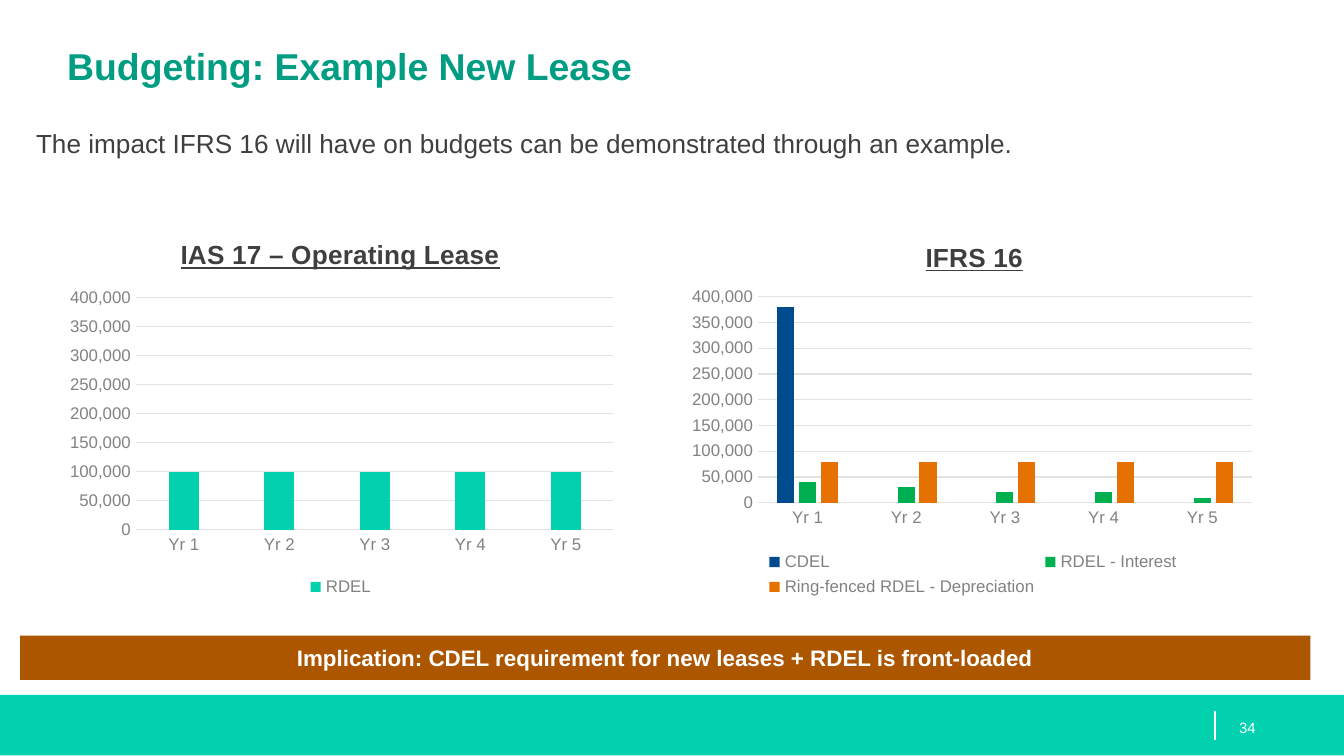
from lxml.etree import SubElement
from pptx import Presentation
from pptx.chart.data import CategoryChartData
from pptx.dml.color import RGBColor
from pptx.enum.chart import XL_CHART_TYPE, XL_LEGEND_POSITION, XL_TICK_MARK
from pptx.enum.shapes import MSO_CONNECTOR, MSO_SHAPE
from pptx.enum.text import MSO_ANCHOR, PP_ALIGN
from pptx.oxml.ns import qn
from pptx.util import Inches, Pt

FONT = "Arial"
TEAL, DARK_TEAL, BROWN, WHITE = "01D1AE", "019D82", "AC5600", "FFFFFF"
TEXT, AXIS_TEXT, GRID = "3F3F3F", "828282", "E2E2E2"
YEARS = [f"Yr {year}" for year in range(1, 6)]


def color(value):
    return RGBColor.from_string(value)


def style_font(font, size, value, bold=False):
    font.name = FONT
    font.size = Pt(size)
    font.bold = bold
    font.color.rgb = color(value)


def add_bar(page, box, fill):
    bar = page.shapes.add_shape(MSO_SHAPE.RECTANGLE, *map(Inches, box))
    bar.shadow.inherit = False
    bar.fill.solid()
    bar.fill.fore_color.rgb = color(fill)
    bar.line.fill.background()
    return bar


def set_text(shape, text, size, value, bold=False, align=PP_ALIGN.LEFT,
             anchor=MSO_ANCHOR.TOP):
    frame = shape.text_frame
    frame.word_wrap = True
    frame.vertical_anchor = anchor
    frame.text = text
    para = frame.paragraphs[0]
    para.alignment = align
    style_font(para.runs[0].font, size, value, bold)


def add_label(page, box, text, size, value, inset=0, **options):
    label = page.shapes.add_textbox(*map(Inches, box))
    frame = label.text_frame
    frame.margin_left = Inches(inset)
    frame.margin_top = frame.margin_right = frame.margin_bottom = 0
    set_text(label, text, size, value, **options)


def add_footer(page, box, number):
    left, top, width, height = box
    add_bar(page, box, TEAL)
    x = Inches(left + width - 0.96)
    divider = page.shapes.add_connector(
        MSO_CONNECTOR.STRAIGHT, x, Inches(top + 0.12), x, Inches(top + 0.34))
    divider.line.color.rgb = color(WHITE)
    divider.line.width = Pt(0.75)
    SubElement(divider._element.spPr, qn("a:effectLst"))
    add_label(page, (left + width - 0.98, top + 0.02, 0.75, 0.44), number, 8,
              WHITE, inset=0.2, anchor=MSO_ANCHOR.MIDDLE)


def set_layout(parent, **fractions):
    """Fix a chart part at fractions of the chart's width and height."""
    layout = parent.find(qn("c:layout"))
    if layout is None:
        layout = SubElement(parent, qn("c:layout"))
        before = parent.find(qn("c:tx"))
        if before is None:
            parent.insert(0, layout)
        else:
            before.addnext(layout)
    manual = SubElement(layout, qn("c:manualLayout"))
    if "w" in fractions:
        SubElement(manual, qn("c:layoutTarget")).set("val", "inner")
    for name in ("x", "y"):
        SubElement(manual, qn(f"c:{name}Mode")).set("val", "edge")
    for name, fraction in fractions.items():
        SubElement(manual, qn(f"c:{name}")).set("val", str(fraction))


def style_axes(chart):
    values, categories = chart.value_axis, chart.category_axis
    values.minimum_scale, values.maximum_scale = 0, 400000
    values.major_unit = 50000
    values.tick_labels.number_format = "#,##0"
    values.tick_labels.number_format_is_linked = False
    values.format.line.fill.background()
    for axis in (values, categories):
        axis.major_tick_mark = axis.minor_tick_mark = XL_TICK_MARK.NONE
        style_font(axis.tick_labels.font, 9, AXIS_TEXT)
    for line in (values.major_gridlines.format.line, categories.format.line):
        line.color.rgb = color(GRID)
        line.width = Pt(0.75)


def add_budget_chart(page, box, title, series, title_at, plot_at):
    data = CategoryChartData(number_format="#,##0")
    data.categories = YEARS
    for name, amounts, _ in series:
        data.add_series(name, amounts)
    chart = page.shapes.add_chart(
        XL_CHART_TYPE.COLUMN_CLUSTERED, *map(Inches, box), data).chart
    style_font(chart.font, 10, TEXT)

    chart.has_title = True
    heading = chart.chart_title
    heading.text_frame.text = title
    font = heading.text_frame.paragraphs[0].runs[0].font
    style_font(font, 14, TEXT, bold=True)
    font.underline = True
    heading.include_in_layout = False

    plot = chart.plots[0]
    plot.gap_width, plot.overlap = 219, -27
    plot.vary_by_categories = False
    for column, (_, _, fill) in zip(plot.series, series):
        column.format.fill.solid()
        column.format.fill.fore_color.rgb = color(fill)
    style_axes(chart)

    chart.has_legend = True
    chart.legend.position = XL_LEGEND_POSITION.BOTTOM
    chart.legend.include_in_layout = False
    style_font(chart.legend.font, 9, AXIS_TEXT)

    set_layout(heading._element, **title_at)
    set_layout(chart._chartSpace.chart.plotArea, **plot_at)


def main():
    deck = Presentation()
    deck.slide_width = Inches(10)
    deck.slide_height = deck.slide_width * 9 // 16
    page = deck.slides.add_slide(deck.slide_layouts[6])

    add_footer(page, (0, 5.17, 10, 0.45), "34")
    add_label(page, (0.5, 0.32, 9, 0.75), "Budgeting: Example New Lease", 20,
              DARK_TEAL, bold=True)
    intro = add_bar(page, (0.17, 0.9, 9.46, 0.66), WHITE)
    set_text(intro, "The impact IFRS 16 will have on budgets can be "
             "demonstrated through an example.", 14, TEXT)

    add_budget_chart(
        page, (0.42, 1.65, 4.23, 2.83), "IAS 17 – Operating Lease",
        [("RDEL", [100000] * 5, TEAL)],
        title_at={"x": 0.21, "y": 0.03},
        plot_at={"x": 0.14, "y": 0.2, "w": 0.84, "h": 0.61})
    add_budget_chart(
        page, (5.08, 1.64, 4.32, 2.84), "IFRS 16",
        [("CDEL", [380000] + [None] * 4, "004A8E"),
         ("RDEL - Interest", [40000, 30000, 20000, 20000, 10000], "00B050"),
         ("Ring-fenced RDEL - Depreciation", [80000] * 5, "E57200")],
        title_at={"x": 0.41, "y": 0.04},
        plot_at={"x": 0.13, "y": 0.2, "w": 0.85, "h": 0.54})

    implication = add_bar(page, (0.15, 4.73, 9.6, 0.33), BROWN)
    set_text(implication, "Implication: CDEL requirement for new leases + "
             "RDEL is front-loaded", 12, WHITE, bold=True,
             align=PP_ALIGN.CENTER, anchor=MSO_ANCHOR.MIDDLE)
    deck.save("out.pptx")


if __name__ == "__main__":
    main()
